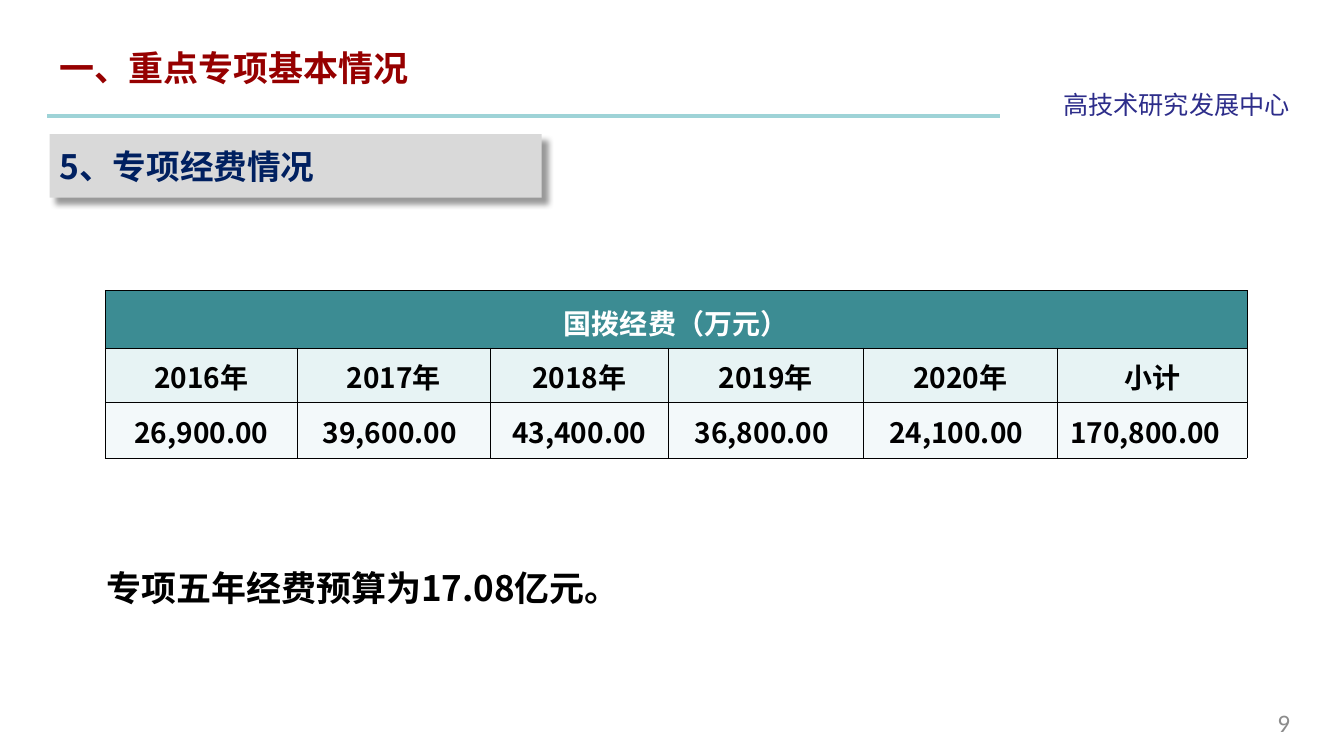
import dataclasses

import pptx
import pptx.dml.color
import pptx.enum.shapes
import pptx.enum.text
import pptx.oxml
import pptx.util

Cm = pptx.util.Cm
Pt = pptx.util.Pt
ALIGN = pptx.enum.text.PP_ALIGN
ANCHOR = pptx.enum.text.MSO_ANCHOR
FIT = pptx.enum.text.MSO_AUTO_SIZE
SHAPE = pptx.enum.shapes.MSO_SHAPE
NS = 'xmlns:a="http://schemas.openxmlformats.org/drawingml/2006/main"'


@dataclasses.dataclass(frozen=True)
class Theme:
    face: str = "Noto Sans CJK SC"
    digit: str = "Calibri"
    red: str = "960000"
    navy: str = "002060"
    blue: str = "2D2D8A"
    gray: str = "8C8C8C"
    panel: str = "D9D9D9"
    rule: str = "9ED3D7"
    teal: str = "3C8C93"
    mint: str = "E7F3F4"
    pale: str = "F3F9FA"
    black: str = "000000"
    white: str = "FFFFFF"
    title: int = 25
    head: int = 24
    cell: int = 20
    small: int = 18


def color(code):
    return pptx.dml.color.RGBColor.from_string(code)


def node(xml):
    return pptx.oxml.parse_xml(xml)


class Deck:
    """Draws themed elements on the current slide."""

    def __init__(self, show, theme):
        self.theme = theme
        self.slide = show.slides.add_slide(show.slide_layouts[6])
        self.shapes = self.slide.shapes

    def fill_text(self, frame, text, size, ink, bold=True, face=None, align=ALIGN.LEFT):
        face = face or self.theme.face
        frame.text = text
        para = frame.paragraphs[0]
        para.alignment = align
        for run in para.runs:
            font = run.font
            font.size, font.bold, font.name = Pt(size), bold, face
            font.color.rgb = color(ink)
            run._r.get_or_add_rPr().append(node(f'<a:ea {NS} typeface="{face}"/>'))
        return para

    def label(self, box, text, size, ink, wrap=True, anchor=ANCHOR.TOP,
              fit=FIT.SHAPE_TO_FIT_TEXT, **style):
        frame = self.shapes.add_textbox(*map(Cm, box)).text_frame
        frame.word_wrap = wrap
        frame.auto_size = fit
        frame.vertical_anchor = anchor
        return self.fill_text(frame, text, size, ink, **style)

    def rule(self, left, right, top):
        line = self.shapes.add_connector(
            pptx.enum.shapes.MSO_CONNECTOR.STRAIGHT,
            Cm(left), Cm(top), Cm(right), Cm(top))
        line.line.color.rgb = color(self.theme.rule)
        line.line.width = Pt(3)
        line._element.spPr.append(node(f"<a:effectLst {NS}/>"))

    def panel(self, box, text):
        shape = self.shapes.add_shape(SHAPE.ROUND_1_RECTANGLE, *map(Cm, box))
        shape.adjustments[0] = 0
        shape.fill.solid()
        shape.fill.fore_color.rgb = color(self.theme.panel)
        shape.line.fill.background()
        shape._element.spPr.append(node(
            f'<a:effectLst {NS}><a:outerShdw blurRad="{Pt(4)}" dist="{Pt(6)}" '
            f'dir="2700000" algn="tl" rotWithShape="0"><a:srgbClr val="{self.theme.black}">'
            '<a:alpha val="40000"/></a:srgbClr></a:outerShdw></a:effectLst>'))
        shape.text_frame.word_wrap = True
        shape.text_frame.vertical_anchor = ANCHOR.MIDDLE
        self.fill_text(shape.text_frame, text, self.theme.head, self.theme.navy)

    def cell(self, cell, text, fill, ink, inset):
        cell.margin_left, cell.margin_top, cell.margin_right, cell.margin_bottom = map(
            Cm, inset)
        cell.vertical_anchor = ANCHOR.MIDDLE
        props = cell._tc.get_or_add_tcPr()
        for side in "LRTB":
            props.append(node(
                f'<a:ln{side} {NS} w="{Pt(0.5)}"><a:solidFill><a:srgbClr '
                f'val="{self.theme.black}"/></a:solidFill></a:ln{side}>'))
        cell.fill.solid()
        cell.fill.fore_color.rgb = color(fill)
        if text:
            self.fill_text(cell.text_frame, text, self.theme.cell, ink,
                           align=ALIGN.CENTER)

    def table(self, left, top, title, cols, rows, data):
        theme = self.theme
        grid = self.shapes.add_table(
            len(rows), len(cols), Cm(left), Cm(top), Cm(sum(cols)), Cm(sum(rows))).table
        for row, high in zip(grid.rows, rows):
            row.height = Cm(high)
        for i, (wide, (year, fund, pad)) in enumerate(zip(cols, data)):
            grid.columns[i].width = Cm(wide)
            self.cell(grid.cell(0, i), "" if i else title, theme.teal, theme.white,
                      (0, 0.3, 0, 0.13))
            self.cell(grid.cell(1, i), year, theme.mint, theme.black,
                      (0.03, 0.03, 0.03, 0))
            self.cell(grid.cell(2, i), fund, theme.pale, theme.black,
                      (0.03, 0.03, 0.03 + pad, 0))
        grid.cell(0, 0).merge(grid.cell(0, len(cols) - 1))


def main():
    show = pptx.Presentation()
    show.slide_width, show.slide_height = Cm(33.87), Cm(19.05)
    theme = Theme()
    deck = Deck(show, theme)
    deck.rule(1.19, 25.2, 2.92)
    deck.label((26.54, 2.13, 6.27, 1.02), "高技术研究发展中心", theme.small, theme.blue,
               wrap=False, bold=False)
    deck.label((31.34, 17.7, 2.03, 1.02), "9", theme.small, theme.gray, bold=False,
               face=theme.digit, align=ALIGN.CENTER, anchor=ANCHOR.MIDDLE, fit=FIT.NONE)
    title = deck.label((1.24, 1.04, 17.73, 1.32), "一、重点专项基本情况",
                       theme.title, theme.red)
    title.line_spacing = Pt(30)
    title.space_before = title.space_after = Pt(6)
    funds = [
        ("2016年", "26,900.00", 0),
        ("2017年", "39,600.00", 0.2),
        ("2018年", "43,400.00", 0),
        ("2019年", "36,800.00", 0.2),
        ("2020年", "24,100.00", 0.2),
        ("小计", "170,800.00", 0.35),
    ]
    deck.table(2.65, 7.32, "国拨经费（万元）", (4.85, 4.85, 4.5, 4.9, 4.9, 4.78),
               (1.45, 1.37, 1.4), funds)
    deck.panel((1.25, 3.38, 12.4, 1.6), "5、专项经费情况")
    deck.label((2.44, 14.15, 26.19, 1.32), "专项五年经费预算为17.08亿元。",
               theme.title, theme.black, align=ALIGN.JUSTIFY)
    show.save("out.pptx")


if __name__ == "__main__":
    main()
